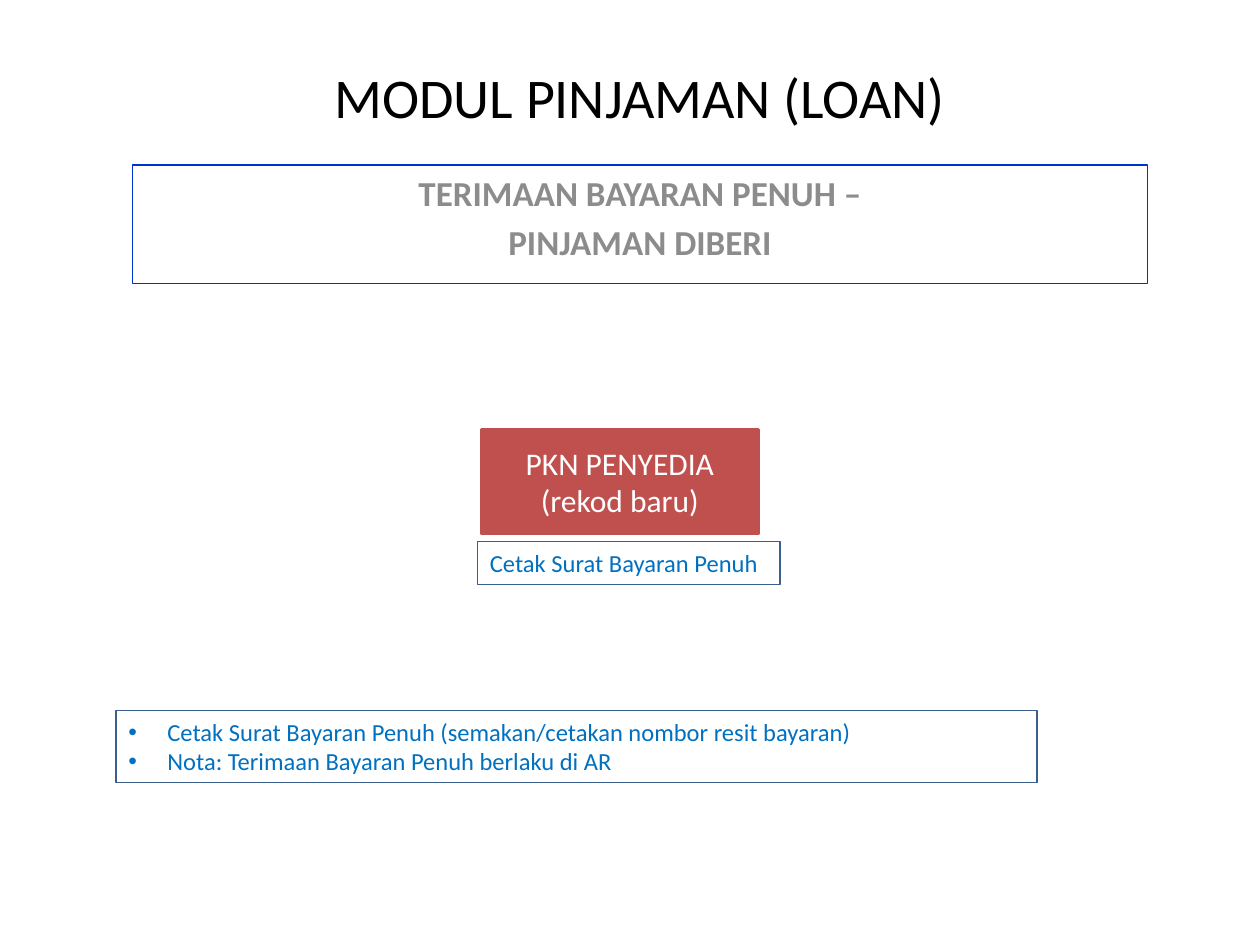
"""Build the loan module slide on full payment receipts."""
import pptx
import pptx.dml.color
import pptx.enum.shapes
import pptx.enum.text
import pptx.util
from lxml import etree
from pptx.oxml.ns import qn
from pptx.util import Inches

COLORS = {
    "title": "000000",
    "subtitle": "8C8C8C",
    "frame": "0033CC",
    "step": "C0504D",
    "step_text": "FFFFFF",
    "note": "0070C0",
    "note_line": "3A5F8C",
}
CENTER = pptx.enum.text.PP_ALIGN.CENTER
LEFT = pptx.enum.text.PP_ALIGN.LEFT
TOP = pptx.enum.text.MSO_ANCHOR.TOP
MIDDLE = pptx.enum.text.MSO_ANCHOR.MIDDLE


class SlideBuilder:
    """Hold the text style and the current slide."""

    font = "Calibri"
    indent = 0.31

    def __init__(self, prs):
        self.slide = prs.slides.add_slide(prs.slide_layouts[5])

    def color(self, name):
        return pptx.dml.color.RGBColor.from_string(COLORS[name])

    def place(self, sp, box):
        for name, value in zip(("left", "top", "width", "height"), box):
            setattr(sp, name, Inches(value))

    def add_text(self, sp, lines, size, color, align=LEFT, anchor=TOP,
                 bold=False, before=None, bullets=False):
        tf = sp.text_frame
        tf.word_wrap = True
        tf.vertical_anchor = anchor
        font = {"name": self.font, "size": pptx.util.Pt(size), "bold": bold}
        for i, line in enumerate(lines):
            p = tf.add_paragraph() if i else tf.paragraphs[0]
            p.alignment = align
            if before is not None:
                p.space_before = pptx.util.Pt(before)
            if bullets:
                self.bullet(p)
            r = p.add_run()
            r.text = line
            for name, value in font.items():
                setattr(r.font, name, value)
            r.font.color.rgb = self.color(color)

    def bullet(self, p):
        pPr = p._p.get_or_add_pPr()
        pPr.set("marL", str(Inches(self.indent)))
        pPr.set("indent", str(-Inches(self.indent)))
        etree.SubElement(pPr, qn("a:buFont")).set("typeface", "Arial")
        etree.SubElement(pPr, qn("a:buChar")).set("char", "•")

    def title(self, box, text):
        sp = self.slide.shapes.title
        self.place(sp, box)
        self.add_text(sp, [text], 32, "title", CENTER, MIDDLE)

    def box(self, box, lines, size, color, line, fill=None, width=0.75, **text):
        sp = self.slide.shapes.add_shape(
            pptx.enum.shapes.MSO_SHAPE.RECTANGLE, *map(Inches, box))
        sp.shadow.inherit = False
        if fill:
            sp.fill.solid()
            sp.fill.fore_color.rgb = self.color(fill)
        else:
            sp.fill.background()
        sp.line.color.rgb = self.color(line)
        sp.line.width = pptx.util.Pt(width)
        self.add_text(sp, lines, size, color, **text)

    def note(self, box, lines, bullets=False):
        self.box(box, lines, 14, "note", "note_line", bullets=bullets)


def main():
    prs = pptx.Presentation()
    prs.slide_width, prs.slide_height = Inches(10), Inches(7.5)
    s = SlideBuilder(prs)
    s.title((1.93, 0.44, 6.3, 0.64), "MODUL PINJAMAN (LOAN)")
    s.box((1.05, 1.31, 8.06, 0.94),
          ["TERIMAAN BAYARAN PENUH –", "PINJAMAN DIBERI"],
          20, "subtitle", "frame", align=CENTER, bold=True, before=4)
    s.box((3.82, 3.41, 2.2, 0.82), ["PKN PENYEDIA", "(rekod baru)"],
          18, "step_text", "step", fill="step", width=2,
          align=CENTER, anchor=MIDDLE)
    s.note((0.92, 5.64, 7.31, 0.57),
           ["Cetak Surat Bayaran Penuh (semakan/cetakan nombor resit bayaran)",
            "Nota: Terimaan Bayaran Penuh berlaku di AR"], bullets=True)
    s.note((3.79, 4.3, 2.4, 0.34), ["Cetak Surat Bayaran Penuh"])
    prs.save("out.pptx")


if __name__ == "__main__":
    main()
